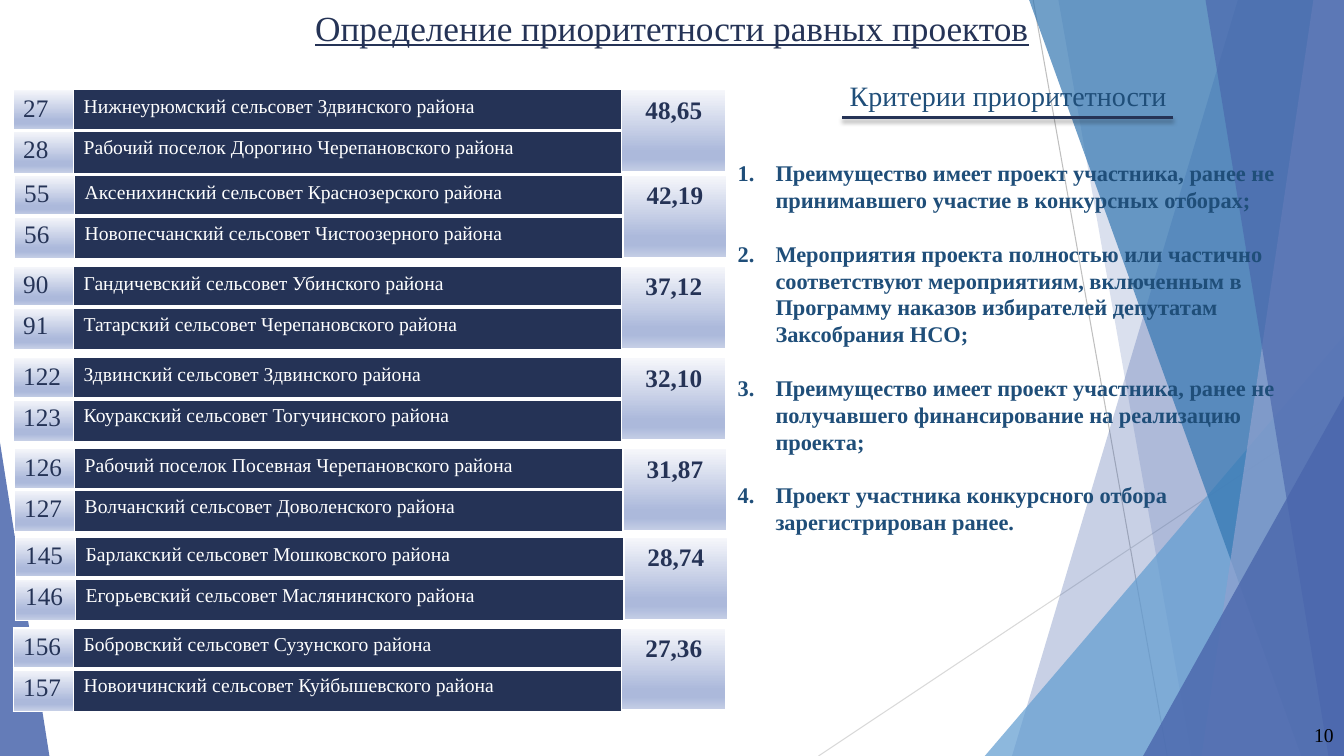
from pptx import Presentation
from pptx.dml.color import RGBColor
from pptx.enum.shapes import MSO_CONNECTOR, MSO_SHAPE
from pptx.enum.text import MSO_ANCHOR, MSO_AUTO_SIZE, PP_ALIGN
from pptx.oxml.ns import qn
from pptx.util import Pt
from lxml.etree import SubElement

W, H = 960, 540
FONT = "Times New Roman"
C = {"navy": "253356", "ink": "1F4E79", "black": "000000", "white": "FFFFFF",
     "indigo": "4A66AC", "sky": "629DD1", "blue": "3477B2", "lilac": "90A2CF",
     "grey": "BFBFBF", "pale": "D9D9D9",
     "grad0": "F6F7FB", "grad1": "ACB9DB", "grad2": "C8D1E7"}
GRADIENT = [(0, "grad0"), (74, "grad1"), (83, "grad1"), (100, "grad2")]

# Background facets from back to front: kind, geometry, colour, opacity.
# A ribbon is given by the x of its left edge at top and bottom,
# a triangle by its box and the place of its apex.
FACETS = [
    ("ribbon", (884.16, 722.88), "indigo", 30),
    ("ribbon", (756, 851.04), "indigo", 20),
    ("triangle", (703.44, 239.76, 256.56, 300.24, 1), "sky", 72),
    ("ribbon", (735.12, 929.52), "blue", 70),
    ("ribbon", (938.16, 858.24), "lilac", 70),
    ("ribbon", (861.12, 948.96), "indigo", 65),
    ("triangle", (816.48, 282.96, 143.52, 257.04, 1), "indigo", 80),
    ("triangle", (0, 316.08, 35.28, 223.92, 0), "indigo", 85),
]

# Pairs of equal projects: left, top, score, (number, project) rows
PAIRS = [
    (9.36, 64.08, "48,65", [("27", "Нижнеурюмский сельсовет Здвинского района"),
                            ("28", "Рабочий поселок Дорогино Черепановского района")]),
    (10.08, 125.28, "42,19", [("55", "Аксенихинский сельсовет Краснозерского района"),
                              ("56", "Новопесчанский сельсовет Чистоозерного района")]),
    (9.36, 190.08, "37,12", [("90", "Гандичевский сельсовет Убинского района"),
                             ("91", "Татарский сельсовет Черепановского района")]),
    (9.36, 255.6, "32,10", [("122", "Здвинский сельсовет Здвинского района"),
                            ("123", "Коуракский сельсовет Тогучинского района")]),
    (10.08, 320.4, "31,87", [("126", "Рабочий поселок Посевная Черепановского района"),
                             ("127", "Волчанский сельсовет Доволенского района")]),
    (10.8, 383.76, "28,74", [("145", "Барлакский сельсовет Мошковского района"),
                             ("146", "Егорьевский сельсовет Маслянинского района")]),
    (9.36, 448.56, "27,36", [("156", "Бобровский сельсовет Сузунского района"),
                             ("157", "Новоичинский сельсовет Куйбышевского района")]),
]

CRITERIA = [
    "Преимущество имеет проект участника, ранее не принимавшего участие в конкурсных отборах;",
    "Мероприятия проекта полностью или частично соответствуют мероприятиям, включенным в "
    "Программу наказов избирателей депутатам Заксобрания НСО;",
    "Преимущество имеет проект участника, ранее не получавшего финансирование на реализацию проекта;",
    "Проект участника конкурсного отбора зарегистрирован ранее.",
]


def rgb(name):
    return RGBColor.from_string(C[name])


def add_run(p, text, color, **fmt):
    r = p.add_run()
    r.text = text
    r.font.color.rgb = rgb(color)
    for key, value in {"name": FONT, **fmt}.items():
        setattr(r.font, key, value)


def add_text_frame(s, box, **fmt):
    tf = s.shapes.add_textbox(*map(Pt, box)).text_frame
    for key, value in {"word_wrap": True, **fmt}.items():
        setattr(tf, key, value)
    return tf


def add_line(s, x1, y1, x2, y2, color, width):
    ln = s.shapes.add_connector(MSO_CONNECTOR.STRAIGHT, *map(Pt, (x1, y1, x2, y2)))
    ln.line.color.rgb = rgb(color)
    ln.line.width = Pt(width)
    return SubElement(ln._element.spPr, qn("a:effectLst"))


def add_color(parent, color, alpha=None):
    clr = SubElement(parent, qn("a:srgbClr"), val=C[color])
    if alpha is not None:
        SubElement(clr, qn("a:alpha"), val=str(alpha * 1000))


def add_background(s, w, h):
    add_line(s, 738, 0, 833.76, h, "grey", 0.75)
    add_line(s, w, 290.16, 584.64, h, "pale", 0.75)
    for kind, geometry, color, alpha in FACETS:
        if kind == "ribbon":
            top, bottom = geometry
            fb = s.shapes.build_freeform(Pt(top), 0)
            fb.add_line_segments([(Pt(x), Pt(y)) for x, y in ((w, 0), (w, h), (bottom, h))])
            sp = fb.convert_to_shape()
        else:
            *box, apex = geometry
            sp = s.shapes.add_shape(MSO_SHAPE.ISOSCELES_TRIANGLE, *map(Pt, box))
            sp.adjustments[0] = apex
        sp.shadow.inherit = False
        sp.line.fill.background()
        sp.fill.solid()
        sp.fill.fore_color.rgb = rgb(color)
        clr = sp._element.spPr.find(qn("a:solidFill"))[0]
        SubElement(clr, qn("a:alpha"), val=str(alpha * 1000))


def add_title(s, box):
    tf = add_text_frame(s, box, vertical_anchor=MSO_ANCHOR.MIDDLE)
    p = tf.paragraphs[0]
    p.alignment = PP_ALIGN.CENTER
    add_run(p, "Определение приоритетности равных проектов", "navy",
            size=Pt(25.2), underline=True)


def add_page_number(s, box):
    tf = add_text_frame(s, box, vertical_anchor=MSO_ANCHOR.MIDDLE)
    p = tf.paragraphs[0]
    p.alignment = PP_ALIGN.RIGHT
    add_run(p, "10", "black", size=Pt(14))


def add_criteria(s, x, y):
    # Heading with a shadowed rule below it
    tf = add_text_frame(s, (x + 79.92, y, 452.16, 31.68), auto_size=MSO_AUTO_SIZE.SHAPE_TO_FIT_TEXT)
    add_run(tf.paragraphs[0], "Критерии приоритетности", "ink", size=Pt(20))
    effects = add_line(s, x + 318.24, y + 31.68, x + 81.36, y + 31.68, "navy", 2)
    shadow = SubElement(effects, qn("a:outerShdw"), blurRad=str(Pt(3)),
                        dist=str(Pt(2)), dir="5400000", rotWithShape="0")
    add_color(shadow, "black", 35)

    # Numbered list
    tf = add_text_frame(s, (x, y + 57.6, 431.28, 344.16), auto_size=MSO_AUTO_SIZE.SHAPE_TO_FIT_TEXT)
    for i, text in enumerate(CRITERIA):
        p = tf.paragraphs[0] if i == 0 else tf.add_paragraph()
        p.space_before = Pt(19.2 if i else 0)
        pPr = p._p.get_or_add_pPr()
        pPr.set("marL", str(Pt(27)))
        pPr.set("indent", str(-Pt(27)))
        SubElement(pPr, qn("a:buFont"), typeface="+mj-lt")
        SubElement(pPr, qn("a:buAutoNum"), type="arabicPeriod")
        add_run(p, text, "ink", size=Pt(16), bold=True)


def format_cell(cell, bottom, top, fill):
    tcPr = cell._tc.get_or_add_tcPr()
    for side, width in (("L", 1), ("R", 1), ("T", top), ("B", bottom)):
        ln = SubElement(tcPr, qn("a:ln" + side), w=str(Pt(width)))
        add_color(SubElement(ln, qn("a:solidFill")), "white")
    if fill == "gradient":
        grad = SubElement(tcPr, qn("a:gradFill"), rotWithShape="1")
        stops = SubElement(grad, qn("a:gsLst"))
        for pos, color in GRADIENT:
            add_color(SubElement(stops, qn("a:gs"), pos=str(pos * 1000)), color)
        SubElement(grad, qn("a:lin"), ang="5400000", scaled="0")
    else:
        cell.fill.solid()
        cell.fill.fore_color.rgb = rgb(fill)


def add_pair(s, x, y, score, projects):
    widths, row_h = (43.2, 391.68, 74.16), 29.25
    tbl = s.shapes.add_table(2, 3, *map(Pt, (x, y, sum(widths), 2 * row_h))).table
    tbl.first_row = tbl.horz_banding = False
    for col, width in zip(tbl.columns, widths):
        col.width = Pt(width)
    for i, (number, project) in enumerate(projects):
        tbl.rows[i].height = Pt(row_h)
        for j, fill in enumerate(("gradient", "navy", "gradient")):
            format_cell(tbl.cell(i, j), 1 if i else 3, 3 if i else 1, fill)
        add_run(tbl.cell(i, 0).text_frame.paragraphs[0], number, "navy", size=Pt(18))
        p = tbl.cell(i, 1).text_frame.paragraphs[0]
        p.line_spacing = 1.07
        add_run(p, project, "white", size=Pt(14))
    tbl.cell(0, 2).merge(tbl.cell(1, 2))
    p = tbl.cell(0, 2).text_frame.paragraphs[0]
    p.alignment = PP_ALIGN.CENTER
    p.line_spacing = 1.07
    add_run(p, score, "navy", size=Pt(18), bold=True)


def main():
    prs = Presentation()
    prs.slide_width, prs.slide_height = Pt(W), Pt(H)
    s = prs.slides.add_slide(prs.slide_layouts[6])
    add_background(s, W, H)
    add_title(s, (0, 0, W, 38.88))
    add_page_number(s, (743.76, 510.48, 216, 28.8))
    add_criteria(s, 519.84, 52.56)
    for pair in PAIRS:
        add_pair(s, *pair)
    prs.save("out.pptx")


if __name__ == "__main__":
    main()
